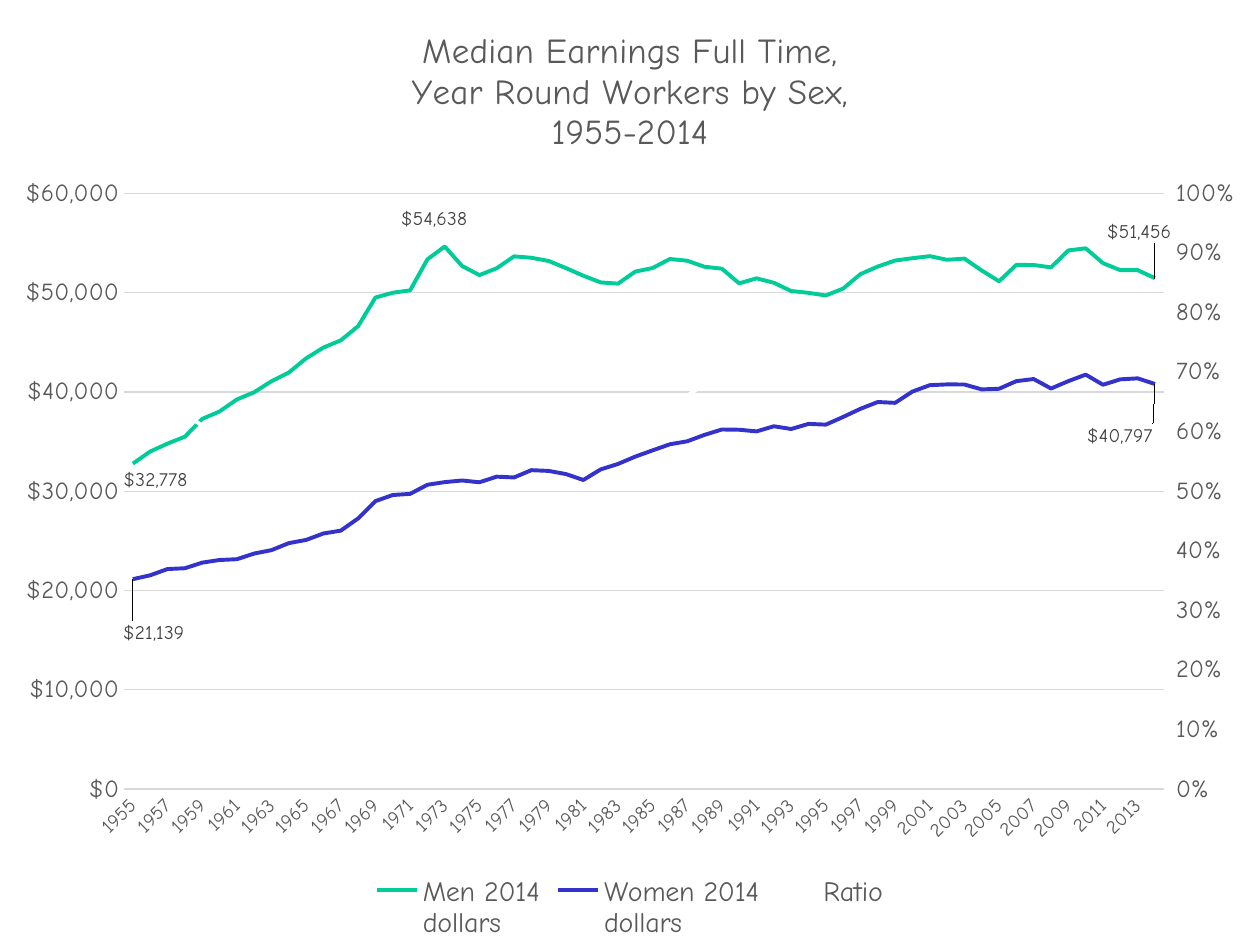
from copy import deepcopy

from lxml.etree import SubElement
from pptx import Presentation
from pptx.chart.axis import CategoryAxis, ValueAxis
from pptx.chart.data import CategoryChartData
from pptx.dml.color import RGBColor
from pptx.enum.chart import (XL_CHART_TYPE, XL_LABEL_POSITION,
                             XL_LEGEND_POSITION, XL_TICK_MARK)
from pptx.oxml import parse_xml
from pptx.oxml.ns import nsdecls, qn
from pptx.util import Pt

FACE = "Comic Neue"
GREY = RGBColor(0x59, 0x59, 0x59)
DARK = RGBColor(0x40, 0x40, 0x40)
RULE = RGBColor(0xD9, 0xD9, 0xD9)
GREEN = RGBColor(0x00, 0xCC, 0x99)
BLUE = RGBColor(0x33, 0x33, 0xCC)
WHITE = RGBColor(0xFF, 0xFF, 0xFF)
MONEY = '"$"#,##0'

# Content
TITLE = ["Median Earnings Full Time,", "Year Round Workers by Sex,", "1955-2014"]
YEARS = [str(year) for year in range(1955, 2015)]
MEN = [
    32778, 33996, 34795, 35490, 37276, 38027, 39235, 39966, 41073, 41950,
    43380, 44466, 45189, 46616, 49503, 49987, 50220, 53350, 54638, 52677,
    51766, 52450, 53647, 53509, 53186, 52466, 51700, 51027, 50899, 52114,
    52472, 53384, 53209, 52597, 52408, 50929, 51434, 50991, 50156, 49976,
    49706, 50408, 51858, 52623, 53229, 53464, 53669, 53304, 53422, 52223,
    51143, 52790, 52780, 52537, 54249, 54457, 52966, 52261, 52259, 51456]
WOMEN = [
    21139, 21530, 22158, 22238, 22803, 23065, 23147, 23715, 24062, 24767,
    25089, 25740, 26026, 27251, 28995, 29609, 29727, 30644, 30911, 31072,
    30894, 31457, 31377, 32118, 32044, 31718, 31125, 32195, 32742, 33482,
    34113, 34724, 35027, 35675, 36215, 36188, 36026, 36538, 36263, 36780,
    36705, 37478, 38295, 38982, 38896, 40035, 40677, 40754, 40744, 40252,
    40315, 41084, 41296, 40342, 41085, 41739, 40722, 41265, 41365, 40797]
RATIO = [
    0.64, 0.63, 0.64, 0.63, 0.61, 0.61, 0.59, 0.59, 0.59, 0.59,
    0.58, 0.58, 0.58, 0.58, 0.59, 0.59, 0.59, 0.57, 0.57, 0.59,
    0.6, 0.6, 0.58, 0.6, 0.6, 0.6, 0.6, 0.63, 0.64, 0.64,
    0.65, 0.65, 0.66, 0.68, 0.69, 0.71, 0.7, 0.72, 0.72, 0.74,
    0.74, 0.74, 0.74, 0.74, 0.73, 0.75, 0.76, 0.76, 0.76, 0.77,
    0.79, 0.78, 0.78, 0.77, 0.76, 0.77, 0.77, 0.79, 0.79, 0.79]

# Labelled points: year, side, shift right and down in points
ABOVE, BELOW = XL_LABEL_POSITION.ABOVE, XL_LABEL_POSITION.BELOW
SERIES = [
    ("Men 2014\ndollars", MEN, MONEY, GREEN,
     [("1955", BELOW, 13, 0), ("1973", ABOVE, -6, -6), ("2014", ABOVE, -9, -17)]),
    ("Women 2014\ndollars", WOMEN, MONEY, BLUE,
     [("1955", BELOW, 12, 21), ("2014", BELOW, -20, 20)]),
    ("Ratio", RATIO, "0%", WHITE, []),
]
WIDE, HIGH = 720, 540
PLOT = (71, 110.5, 594, 340.5)
LEGEND = (212, 499, 304, 41)


def style(font, size, color=GREY):
    font.name, font.size, font.bold = FACE, Pt(size), False
    font.color.rgb = color


def write(frame, text, **look):
    frame.text = text
    for para in frame.paragraphs:
        style(para.runs[0].font, **look)


def layout(left, top, wide=None, high=None, inner=False):
    """Manual layout, from points to shares of the chart."""
    node = parse_xml(f"<c:layout {nsdecls('c')}><c:manualLayout/></c:layout>")
    man = node[0]
    parts = [("layoutTarget", "inner")] if inner else []
    if wide:
        parts += [("xMode", "edge"), ("yMode", "edge")]
    parts += [("x", left / WIDE), ("y", top / HIGH)]
    if wide:
        parts += [("w", wide / WIDE), ("h", high / HIGH)]
    for tag, val in parts:
        SubElement(man, qn("c:" + tag)).set("val", str(val))
    return node


deck = Presentation()
deck.slide_width, deck.slide_height = Pt(WIDE), Pt(HIGH)
slide = deck.slides.add_slide(deck.slide_layouts[6])

# Chart
data = CategoryChartData()
data.categories = YEARS
for name, vals, form, _, _ in SERIES:
    data.add_series(name, vals, number_format=form)
chart = slide.shapes.add_chart(XL_CHART_TYPE.LINE, 0, 0, Pt(WIDE), Pt(HIGH), data).chart
style(chart.font, 10, RGBColor(0, 0, 0))
write(chart.chart_title.text_frame, "\n".join(TITLE), size=20)
chart.chart_title.include_in_layout = False

# Legend
chart.has_legend = True
legend = chart.legend
legend.position = XL_LEGEND_POSITION.BOTTOM
legend.include_in_layout = False
style(legend.font, 16)
legend._element.find(qn("c:legendPos")).addnext(layout(*LEGEND))

# Axes
years, money = chart.category_axis, chart.value_axis
for axis, size in ((years, 11), (money, 14)):
    axis.major_tick_mark = axis.minor_tick_mark = XL_TICK_MARK.NONE
    style(axis.tick_labels.font, size)
years.format.line.color.rgb = RULE
years.format.line.width = Pt(0.75)
years._element.find(qn("c:txPr")).find(qn("a:bodyPr")).set("rot", "-2700000")
skip = parse_xml(f'<c:tickLblSkip {nsdecls("c")} val="2"/>')
years._element.find(qn("c:noMultiLvlLbl")).addprevious(skip)
money.minimum_scale, money.maximum_scale, money.major_unit = 0, 60000, 10000
money.tick_labels.number_format = MONEY
money.tick_labels.number_format_is_linked = False
money.format.line.fill.background()
grid = money.major_gridlines.format.line
grid.color.rgb, grid.width = RULE, Pt(0.75)

# Lines and point labels
plot = chart.plots[0]
plot.vary_by_categories = False
for line, (_, _, _, color, marks) in zip(plot.series, SERIES):
    line.smooth = False
    line.format.line.color.rgb, line.format.line.width = color, Pt(2.25)
    for year, side, right, down in marks:
        label = line.points[YEARS.index(year)].data_label
        style(label.font, 11, DARK)
        label.position = side
        node = label._get_or_add_dLbl()
        node.find(qn("c:idx")).addnext(layout(right, down))
    if marks:
        line.data_labels.show_value = False
        labels = line.data_labels._element
        for old in labels.findall(qn("c:showLeaderLines")):
            labels.remove(old)
        SubElement(labels, qn("c:showLeaderLines")).set("val", "1")

# Ratio on a second pair of axes
first = plot._element
second = deepcopy(first)
first.addnext(second)
first.remove(first.findall(qn("c:ser"))[2])
for item in second.findall(qn("c:ser"))[:2]:
    second.remove(item)
share, hidden = deepcopy(money._element), deepcopy(years._element)
money._element.addnext(share)
share.addnext(hidden)
for node, key, cross in ((share, "5002", "5001"), (hidden, "5001", "5002")):
    node.find(qn("c:axId")).set("val", key)
    node.find(qn("c:crossAx")).set("val", cross)
for node, key in zip(second.findall(qn("c:axId")), ("5001", "5002")):
    node.set("val", key)
share.find(qn("c:axPos")).set("val", "r")
share.find(qn("c:crosses")).set("val", "max")
CategoryAxis(hidden).visible = False
right = ValueAxis(share)
right.has_major_gridlines = False
right.maximum_scale, right.major_unit = 1, 0.1
right.major_tick_mark = XL_TICK_MARK.OUTSIDE
right.tick_labels.number_format = "0%"

# Plot area
area = first.getparent()
for old in area.findall(qn("c:layout")):
    area.remove(old)
area.insert(0, layout(*PLOT, inner=True))

deck.save("out.pptx")
